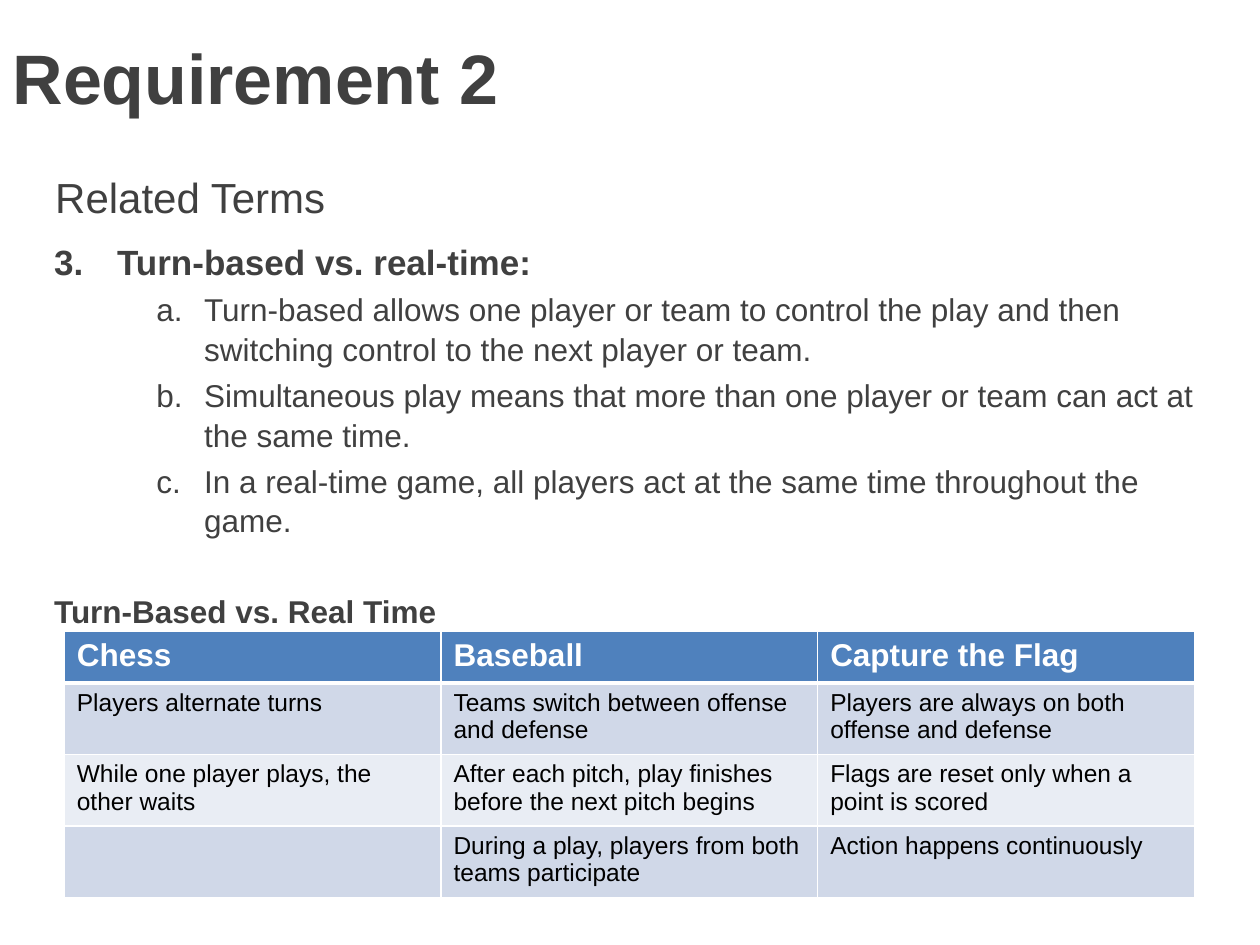
import pptx
import pptx.dml.color
import pptx.enum.text
import pptx.oxml.ns
import pptx.util
from lxml import etree

Inches, Pt = pptx.util.Inches, pptx.util.Pt
RGBColor = pptx.dml.color.RGBColor
ANCHOR = pptx.enum.text.MSO_ANCHOR
qn = pptx.oxml.ns.qn

FONT = "Arial"
GREY = RGBColor(0x40, 0x40, 0x40)
BLACK = RGBColor(0, 0, 0)
WHITE = RGBColor(0xFF, 0xFF, 0xFF)
HEADER_BLUE = RGBColor(0x4F, 0x81, 0xBD)
BANDS = (RGBColor(0xD0, 0xD8, 0xE8), RGBColor(0xE9, 0xED, 0xF4))

TERMS = [
    "Turn-based allows one player or team to control the play and then "
    "switching control to the next player or team.",
    "Simultaneous play means that more than one player or team can act at the same time.",
    "In a real-time game, all players act at the same time throughout the game.",
]
COMPARISON = [
    ["Chess", "Baseball", "Capture the Flag"],
    ["Players alternate turns", "Teams switch between offense and defense",
     "Players are always on both offense and defense"],
    ["While one player plays, the other waits",
     "After each pitch, play finishes before the next pitch begins",
     "Flags are reset only when a point is scored"],
    ["", "During a play, players from both teams participate",
     "Action happens continuously"],
]


def write(frame, text, size=18, bold=False, color=GREY, before=0, spacing=None,
          level=0, margin=0, hanging=0, numbering=None, start=1):
    """Fill the frame's empty first paragraph, or append a new one."""
    paragraph = frame.paragraphs[0]
    if paragraph.runs:
        paragraph = frame.add_paragraph()
    paragraph.alignment = pptx.enum.text.PP_ALIGN.LEFT
    paragraph.level = level
    paragraph.space_before = Pt(before)
    if spacing:
        paragraph.line_spacing = spacing
    if numbering:
        properties = paragraph._p.get_or_add_pPr()
        properties.set("marL", str(Inches(margin)))
        properties.set("indent", str(-Inches(hanging)))
        number = etree.SubElement(properties, qn("a:buAutoNum"), type=numbering)
        if start > 1:
            number.set("startAt", str(start))
    run = paragraph.add_run()
    run.text = text
    run.font.name = FONT
    run.font.size = Pt(size)
    run.font.bold = bold
    run.font.color.rgb = color


class SlideBuilder:
    def __init__(self, deck):
        self.slide = deck.slides.add_slide(deck.slide_layouts[5])

    def title(self, text, left, top, width, height):
        title = self.slide.shapes.title
        title.left, title.top = Inches(left), Inches(top)
        title.width, title.height = Inches(width), Inches(height)
        title.text_frame.vertical_anchor = ANCHOR.MIDDLE
        write(title.text_frame, text, size=40, bold=True)

    def text_box(self, left, top, width, height, anchor=ANCHOR.TOP):
        frame = self.slide.shapes.add_textbox(
            Inches(left), Inches(top), Inches(width), Inches(height)).text_frame
        frame.word_wrap = True
        frame.vertical_anchor = anchor
        return frame

    def table(self, rows, left, top, column_width, header_height, row_height):
        heights = [header_height] + [row_height] * (len(rows) - 1)
        columns = len(rows[0])
        table = self.slide.shapes.add_table(
            len(rows), columns, Inches(left), Inches(top),
            Inches(column_width * columns), Inches(sum(heights))).table
        for column in table.columns:
            column.width = Inches(column_width)
        for r, texts in enumerate(rows):
            table.rows[r].height = Inches(heights[r])
            header = r == 0
            for c, text in enumerate(texts):
                cell = table.cell(r, c)
                if text:
                    write(cell.text_frame, text, size=18 if header else 14,
                          bold=header, color=WHITE if header else BLACK)
                self.borders(cell, top=3 if r == 1 else 1, bottom=3 if header else 1)
                cell.fill.solid()
                cell.fill.fore_color.rgb = HEADER_BLUE if header else BANDS[(r - 1) % 2]

    def borders(self, cell, top, bottom):
        properties = cell._tc.get_or_add_tcPr()
        for side, width in (("L", 1), ("R", 1), ("T", top), ("B", bottom)):
            line = etree.SubElement(properties, qn("a:ln" + side), w=str(Pt(width)))
            fill = etree.SubElement(line, qn("a:solidFill"))
            etree.SubElement(fill, qn("a:srgbClr"), val=str(WHITE))


def main():
    deck = pptx.Presentation()
    deck.slide_width, deck.slide_height = Inches(10), Inches(7.5)
    builder = SlideBuilder(deck)

    # Headings
    builder.title("Requirement 2", 0, 0.02, 10, 1.17)
    subtitle = builder.text_box(0.34, 1.31, 9, 0.5, ANCHOR.MIDDLE)
    write(subtitle, "Related Terms", size=24)

    # Numbered terms and the table's caption
    terms = builder.text_box(0, 1.81, 9.69, 3.14)
    terms.margin_left, terms.margin_top = Inches(0.43), Inches(0.08)
    write(terms, "Turn-based vs. real-time:", size=20, bold=True, spacing=1.05,
          margin=0.5, hanging=0.5, numbering="arabicPeriod", start=3)
    for term in TERMS:
        write(terms, term, before=3.6, spacing=1.05, level=1,
              margin=1.19, hanging=0.38, numbering="alphaLcPeriod")
    write(terms, "Turn-Based vs. Real Time", bold=True, before=29, spacing=1.05)

    # Comparison of games
    builder.table(COMPARISON, 0.51, 5.01, 2.99, 0.41, 0.53)

    deck.save("out.pptx")


if __name__ == "__main__":
    main()
